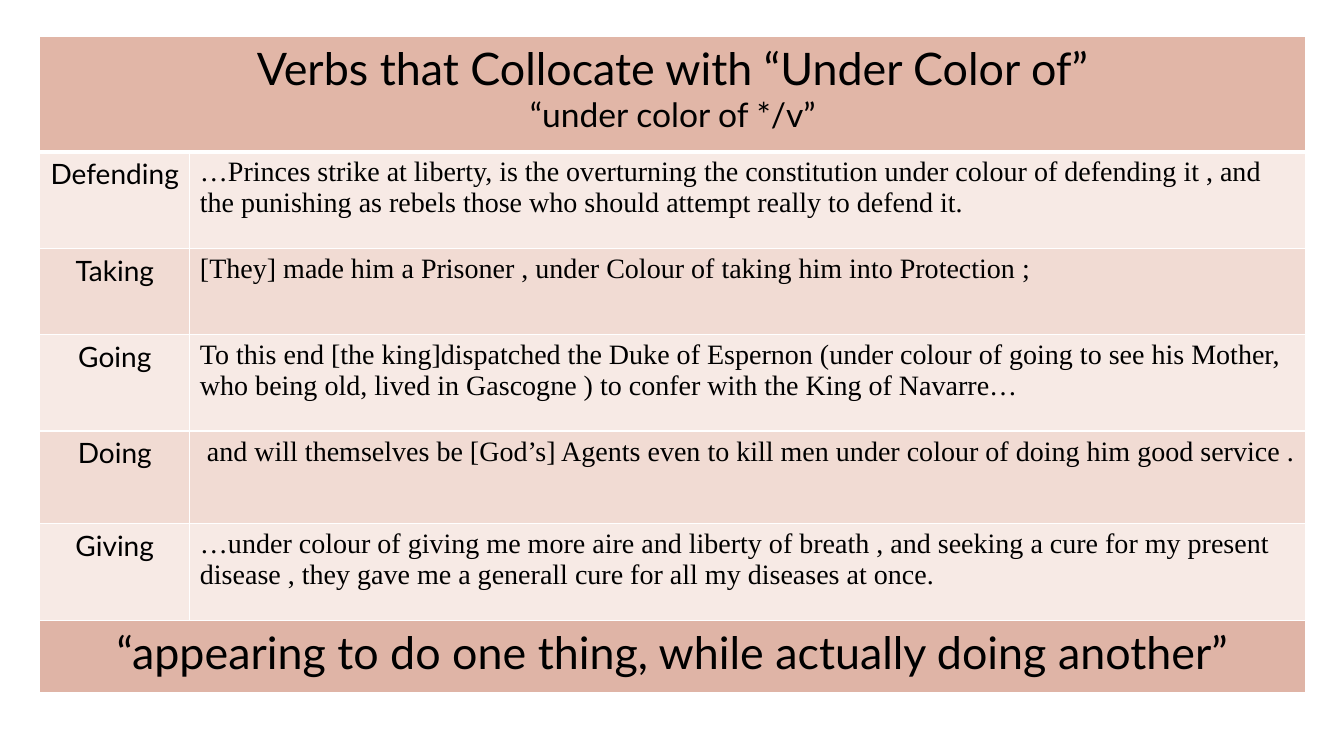
from lxml import etree
from pptx import Presentation, util as u
from pptx.dml.color import RGBColor
from pptx.enum import text as t
from pptx.oxml.ns import qn

SLIDE_W, SLIDE_H = u.Inches(13.33), u.Inches(7.5)
LABEL_FONT, QUOTE_FONT = "Lato", "Times New Roman"
TITLE_FILL, CLOSING_FILL = "E1B6A7", "DFB4A6"
BANDS = ("F7EAE5", "F1DBD3")
COLUMNS = (1.49, 11.07)
ROWS = (1.15, 0.96, 0.85, 0.96, 0.92, 0.96, 0.72)

# Each verb with the lines of its quotation
QUOTATIONS = [
    ("Defending", ["…Princes strike at liberty, is the overturning the constitution under "
                   "colour of defending it , and the punishing as rebels those who should "
                   "attempt really to defend it."]),
    ("Taking", ["[They] made him a Prisoner , under Colour of taking him into Protection ;"]),
    ("Going", ["To this end [the king]dispatched the Duke of Espernon (under colour of "
               "going to see his Mother,",
               "who being old, lived in Gascogne ) to confer with the King of Navarre…"]),
    ("Doing", [" and will themselves be [God’s] Agents even to kill men under colour of "
               "doing him good service ."]),
    ("Giving", ["…under colour of giving me more aire and liberty of breath , and seeking a "
                "cure for my present disease , they gave me a generall cure for all my "
                "diseases at once."]),
]


def color(hex_value):
    return RGBColor.from_string(hex_value)


def write(paragraph, words, size=20, font=LABEL_FONT, align=t.PP_ALIGN.CENTER):
    """Put formatted words into a paragraph."""
    paragraph.alignment = align
    run = paragraph.add_run()
    run.text = words
    run.font.size = u.Pt(size)
    run.font.name = font
    run.font.bold = False
    run.font.color.rgb = color("000000")


def write_lines(cell, lines, **look):
    """Write one paragraph for each line of a cell."""
    frame = cell.text_frame
    for number, line in enumerate(lines):
        write(frame.add_paragraph() if number else frame.paragraphs[0], line, **look)


def style_cell(cell, fill, bottom=1):
    """Give a cell white borders and a solid fill."""
    properties = cell._tc.get_or_add_tcPr()
    for side, points in (("L", 1), ("R", 1), ("T", 1), ("B", bottom)):
        border = etree.SubElement(properties, qn(f"a:ln{side}"), w=str(u.Pt(points)))
        solid = etree.SubElement(border, qn("a:solidFill"))
        etree.SubElement(solid, qn("a:srgbClr"), val="FFFFFF")
    cell.fill.solid()
    cell.fill.fore_color.rgb = color(fill)


def add_grid(slide):
    """Add the table with its column widths and row heights."""
    grid = slide.shapes.add_table(
        len(ROWS), len(COLUMNS), int(SLIDE_W * 0.0295), int(SLIDE_H * 0.0475),
        u.Inches(sum(COLUMNS)), u.Inches(sum(ROWS))).table
    grid.first_row = grid.horz_banding = False
    for column, width in zip(grid.columns, COLUMNS):
        column.width = u.Inches(width)
    for row, height in zip(grid.rows, ROWS):
        row.height = u.Inches(height)
    return grid


def banner(grid, row, fill, bottom=1):
    """Merge a whole row and return its leading cell."""
    first, last = grid.cell(row, 0), grid.cell(row, len(COLUMNS) - 1)
    first.merge(last)
    for cell in (first, last):
        style_cell(cell, fill, bottom)
    return first


def main():
    deck = Presentation()
    deck.slide_width, deck.slide_height = SLIDE_W, SLIDE_H
    slide = deck.slides.add_slide(deck.slide_layouts[6])
    grid = add_grid(slide)

    # Heading row
    heading = banner(grid, 0, TITLE_FILL, bottom=3)
    write_lines(heading, ["Verbs that Collocate with “Under Color of”"], size=32)
    write(heading.text_frame.add_paragraph(), "“under color of */v”", size=24)

    # Verbs and quotations
    for row, (verb, quotation) in enumerate(QUOTATIONS, start=1):
        verb_cell, quotation_cell = grid.cell(row, 0), grid.cell(row, 1)
        for cell in (verb_cell, quotation_cell):
            style_cell(cell, BANDS[(row - 1) % 2])
        write_lines(verb_cell, [verb])
        write_lines(quotation_cell, quotation, font=QUOTE_FONT, align=t.PP_ALIGN.LEFT)

    # Closing row
    closing = banner(grid, len(ROWS) - 1, CLOSING_FILL)
    write_lines(closing, ["“appearing to do one thing, while actually doing another”"], size=32)

    deck.save("out.pptx")


if __name__ == "__main__":
    main()
